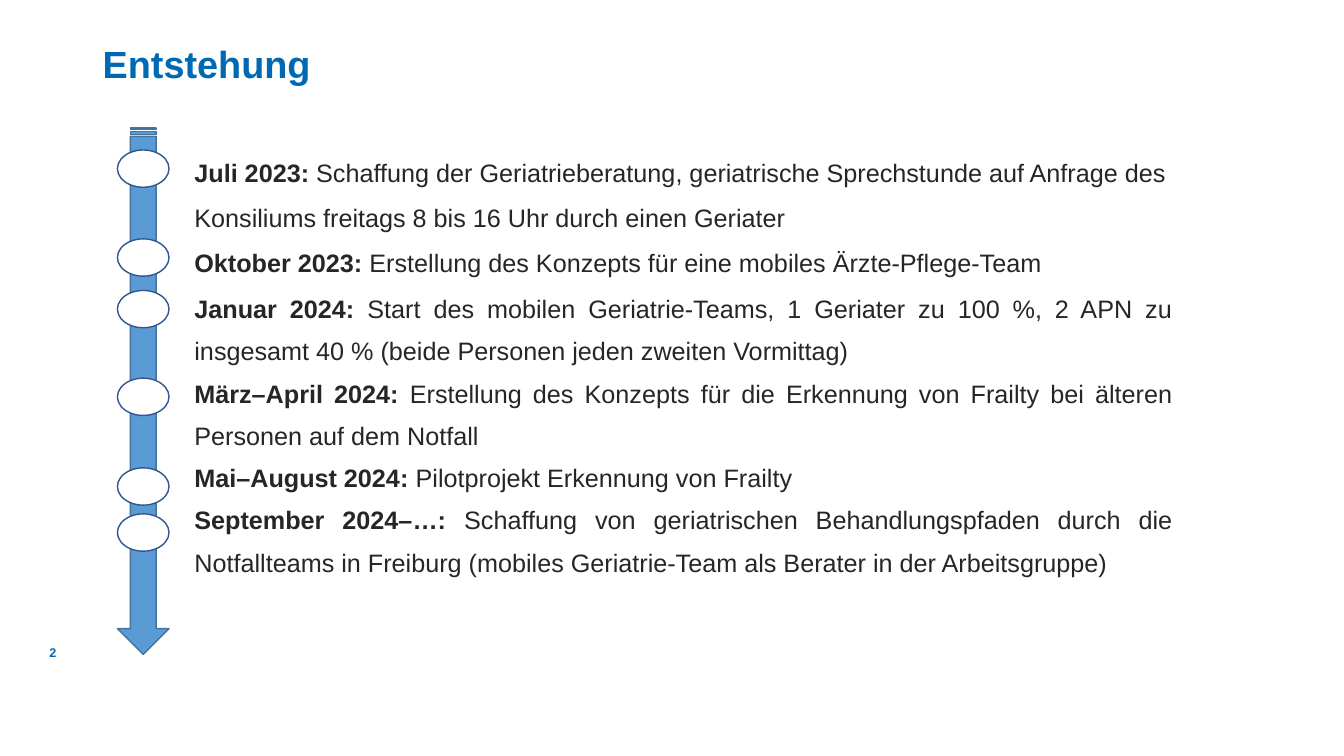
from pptx import Presentation
from pptx.dml.color import RGBColor
from pptx.enum.shapes import MSO_SHAPE
from pptx.enum.text import MSO_ANCHOR, PP_ALIGN
from pptx.util import Cm, Pt

TITLE = "Entstehung"
PAGE = "2"
FOUNDING = [
    ("Juli 2023:", " Schaffung der Geriatrieberatung, geriatrische Sprechstunde auf Anfrage des Konsiliums freitags 8 bis 16 Uhr durch einen Geriater", PP_ALIGN.LEFT),
    ("Oktober 2023:", " Erstellung des Konzepts für eine mobiles Ärzte-Pflege-Team", PP_ALIGN.JUSTIFY),
]
ROLLOUT = [
    ("Januar 2024:", " Start des mobilen Geriatrie-Teams, 1 Geriater zu 100 %, 2 APN zu insgesamt 40 % (beide Personen jeden zweiten Vormittag)", PP_ALIGN.JUSTIFY),
    ("März–April 2024:", " Erstellung des Konzepts für die Erkennung von Frailty bei älteren Personen auf dem Notfall", PP_ALIGN.JUSTIFY),
    ("Mai–August 2024:", " Pilotprojekt Erkennung von Frailty", PP_ALIGN.JUSTIFY),
    ("September 2024–…:", " Schaffung von geriatrischen Behandlungspfaden durch die Notfallteams in Freiburg (mobiles Geriatrie-Team als Berater in der Arbeitsgruppe)", PP_ALIGN.JUSTIFY),
]
MARKER_TOPS = [3.78, 6.02, 7.32, 9.53, 11.79, 12.95]

BLUE = RGBColor(0x00, 0x69, 0xB4)
TEXT = RGBColor(0x26, 0x26, 0x26)
WHITE = RGBColor(0xFF, 0xFF, 0xFF)
ARROW_FILL = RGBColor(0x5B, 0x9B, 0xD5)
ARROW_LINE = RGBColor(0x43, 0x73, 0x9E)
MARKER_LINE = RGBColor(0x32, 0x54, 0x91)

AXIS_X = 3.61
ARROW_TOP, ARROW_LENGTH, ARROW_WIDTH = 3.23, 13.26, 1.3
MARKER_W, MARKER_H = 1.3, 0.94
TEXT_X, TEXT_W = 4.65, 25.15

prs = Presentation()
prs.slide_width, prs.slide_height = Cm(33.87), Cm(19.05)
s = prs.slides.add_slide(prs.slide_layouts[6])


def add_box(x, y, w, h, anchor=MSO_ANCHOR.TOP):
    tf = s.shapes.add_textbox(Cm(x), Cm(y), Cm(w), Cm(h)).text_frame
    tf.word_wrap = True
    tf.vertical_anchor = anchor
    return tf


def add_run(p, text, size, color, bold):
    r = p.add_run()
    r.text = text
    r.font.name = "Arial"
    r.font.size = Pt(size)
    r.font.bold = bold
    r.font.color.rgb = color


def add_entries(entries, y, h, spacing):
    tf = add_box(TEXT_X, y, TEXT_W, h)
    for i, (date, event, align) in enumerate(entries):
        p = tf.add_paragraph() if i else tf.paragraphs[0]
        p.alignment = align
        p.line_spacing = spacing
        add_run(p, date, 18, TEXT, True)
        add_run(p, event, 18, TEXT, False)


def add_figure(kind, x, y, w, h, fill, line):
    sp = s.shapes.add_shape(kind, Cm(x), Cm(y), Cm(w), Cm(h))
    sp.shadow.inherit = False
    sp.fill.solid()
    sp.fill.fore_color.rgb = fill
    sp.line.color.rgb = line
    sp.line.width = Pt(1)
    return sp


p = add_box(0, 16.05, 2.67, 0.76, MSO_ANCHOR.MIDDLE).paragraphs[0]
p.alignment = PP_ALIGN.CENTER
add_run(p, PAGE, 9, BLUE, True)

p = add_box(2.34, 1.02, 29.21, 1.32).paragraphs[0]
p.line_spacing = 0.9
add_run(p, TITLE, 27, BLUE, True)

add_entries(FOUNDING, 3.45, 4.09, 1.5)

arrow = add_figure(MSO_SHAPE.STRIPED_RIGHT_ARROW, AXIS_X - ARROW_LENGTH / 2,
                   ARROW_TOP + (ARROW_LENGTH - ARROW_WIDTH) / 2,
                   ARROW_LENGTH, ARROW_WIDTH, ARROW_FILL, ARROW_LINE)
arrow.rotation = 90
for top in MARKER_TOPS:
    add_figure(MSO_SHAPE.OVAL, AXIS_X - MARKER_W / 2, top, MARKER_W, MARKER_H, WHITE, MARKER_LINE)

add_entries(ROLLOUT, 6.96, 8.15, 1.4)

prs.save("out.pptx")
